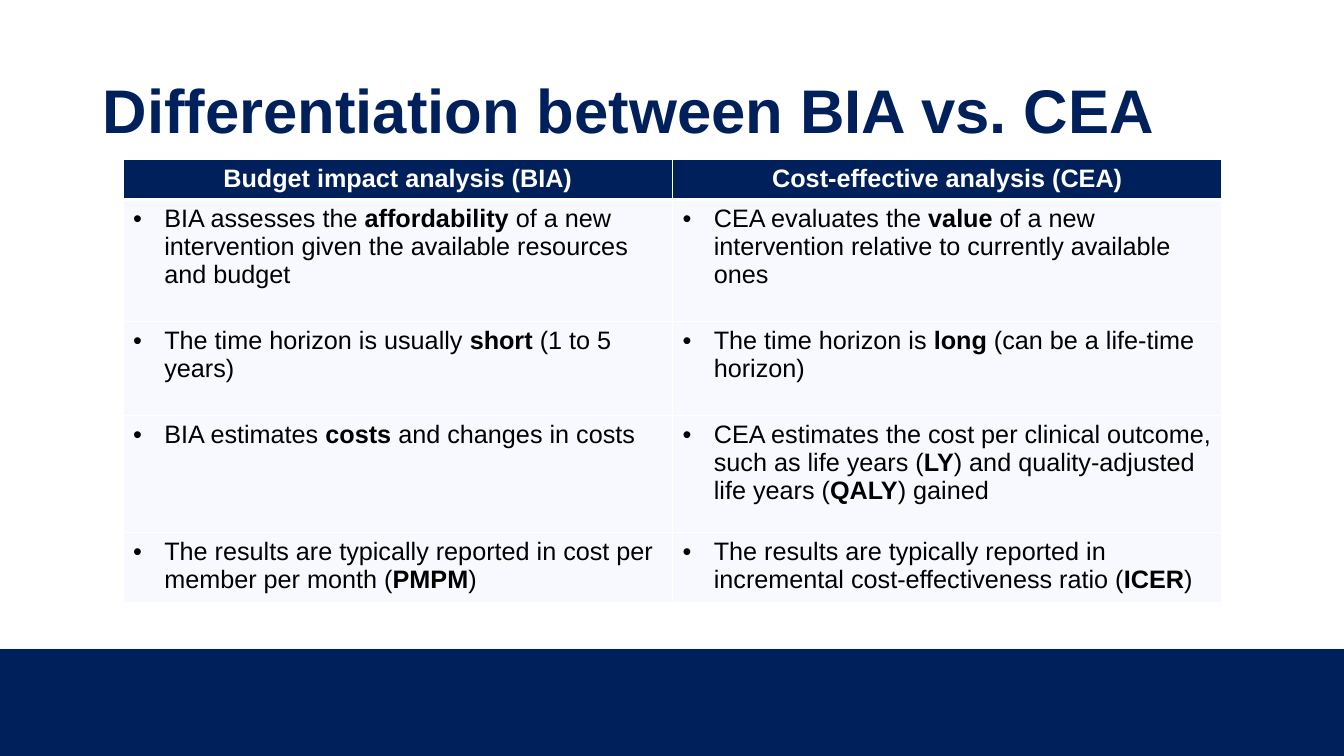
from pptx import Presentation
from pptx.dml.color import RGBColor
from pptx.enum.shapes import MSO_SHAPE
from pptx.enum.text import MSO_ANCHOR, PP_ALIGN
from pptx.oxml import parse_xml
from pptx.oxml.ns import nsdecls
from pptx.util import Inches, Pt

NAVY, WHITE, BLACK, PALE, GREY = "00205B", "FFFFFF", "000000", "F7F9FF", "F8F8F8"

# Bold words stand between asterisks
HEADS = ["Budget impact analysis (BIA)", "Cost-effective analysis (CEA)"]
ROWS = [
    ["BIA assesses the *affordability *of a new intervention given the "
     "available resources and budget",
     "CEA evaluates the *value* of a new intervention relative to currently "
     "available ones"],
    ["The time horizon is usually *short* (1 to 5 years)",
     "The time horizon is *long* (can be a life-time horizon)"],
    ["BIA estimates *costs* and changes in costs",
     "CEA estimates the cost per clinical outcome, such as life years (*LY*) "
     "and quality-adjusted life years (*QALY*) gained"],
    ["The results are typically reported in cost per member per month (*PMPM*)",
     "The results are typically reported in incremental cost-effectiveness "
     "ratio (*ICER*)"],
]
HEIGHTS = [0.39, 1.21, 0.93, 1.16, 0.68]


def color(text):
    return RGBColor.from_string(text)


class Deck:
    font = "Arial"

    def __init__(self):
        self.prs = Presentation()
        self.prs.slide_width = Inches(13.33)
        self.prs.slide_height = Inches(7.5)
        self.slide = self.prs.slides.add_slide(self.prs.slide_layouts[6])

    def bar(self, x, y, w, h, fill):
        shape = self.slide.shapes.add_shape(
            MSO_SHAPE.RECTANGLE, Inches(x), Inches(y), Inches(w), Inches(h))
        shape.shadow.inherit = False
        shape.fill.solid()
        shape.fill.fore_color.rgb = color(fill)
        shape.line.fill.background()

    def run(self, para, text, size, ink, bold):
        run = para.add_run()
        run.text = text
        run.font.name = self.font
        run.font.size = Pt(size)
        run.font.bold = bold
        run.font.color.rgb = color(ink)

    def title(self, x, y, w, h, text):
        box = self.slide.shapes.add_textbox(
            Inches(x), Inches(y), Inches(w), Inches(h))
        frame = box.text_frame
        frame.word_wrap = True
        frame.vertical_anchor = MSO_ANCHOR.MIDDLE
        para = frame.paragraphs[0]
        para.line_spacing = 0.9
        self.run(para, text, 44, NAVY, True)

    def bullet(self, para):
        props = para._p.get_or_add_pPr()
        props.set("marL", str(Inches(0.31)))
        props.set("indent", str(-Inches(0.31)))
        for xml in (f'<a:buClr {nsdecls("a")}><a:srgbClr val="{BLACK}"/></a:buClr>',
                    f'<a:buFont {nsdecls("a")} typeface="{self.font}"/>',
                    f'<a:buChar {nsdecls("a")} char="•"/>'):
            props.append(parse_xml(xml))

    def edges(self, cell, top, base):
        props = cell._tc.get_or_add_tcPr()
        for side, width in zip("LRTB", (1, 1, top, base)):
            props.append(parse_xml(
                f'<a:ln{side} {nsdecls("a")} w="{Pt(width)}"><a:solidFill>'
                f'<a:srgbClr val="{WHITE}"/></a:solidFill></a:ln{side}>'))

    def cell(self, cell, text, row):
        head = row == 0
        self.edges(cell, 3 if row == 1 else 1, 3 if head else 1)
        cell.fill.solid()
        cell.fill.fore_color.rgb = color(NAVY if head else PALE)
        para = cell.text_frame.paragraphs[0]
        if head:
            para.alignment = PP_ALIGN.CENTER
        else:
            self.bullet(para)
        for i, part in enumerate(text.split("*")):
            self.run(para, part, 18, WHITE if head else BLACK, head or i % 2 == 1)

    def table(self, x, y, w, heights, rows):
        grid = self.slide.shapes.add_table(
            len(rows), len(rows[0]), Inches(x), Inches(y), Inches(w),
            Inches(sum(heights))).table
        for r, (high, texts) in enumerate(zip(heights, rows)):
            grid.rows[r].height = Inches(high)
            for c, text in enumerate(texts):
                self.cell(grid.cell(r, c), text, r)


def main():
    deck = Deck()
    # Footer band with a thin pale edge
    deck.bar(0, 6.43, 13.33, 1.07, GREY)
    deck.bar(0, 6.44, 13.33, 1.06, NAVY)
    # Title
    deck.title(0.92, 0.4, 11.5, 1.45, "Differentiation between BIA vs. CEA")
    # Comparison table
    deck.table(1.22, 1.58, 10.9, HEIGHTS, [HEADS] + ROWS)
    deck.prs.save("out.pptx")


if __name__ == "__main__":
    main()
